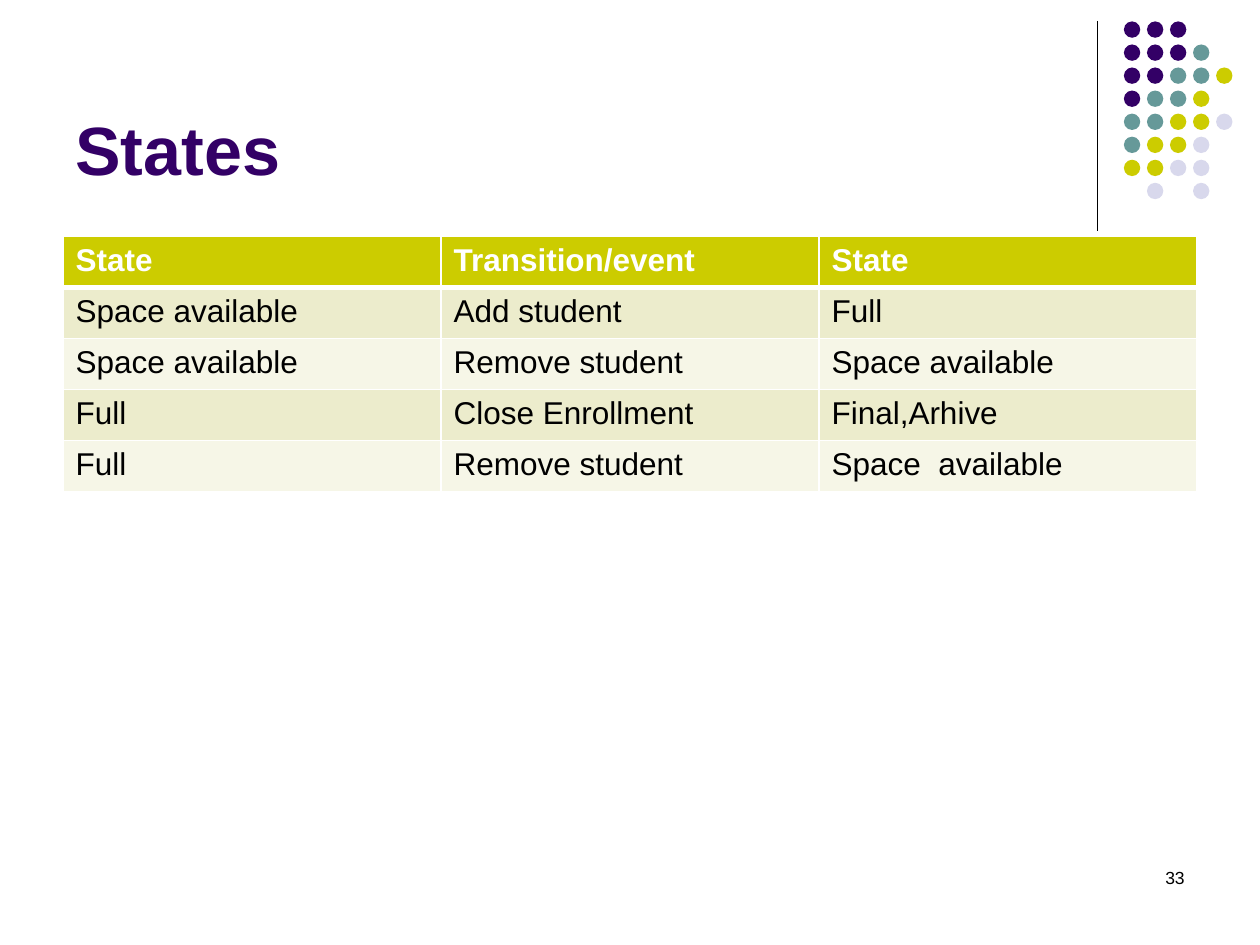
import lxml.etree
import pptx
import pptx.dml.color
import pptx.enum.shapes
import pptx.enum.text
import pptx.oxml.ns
import pptx.util

RGB = pptx.dml.color.RGBColor
PURPLE = RGB(0x33, 0x00, 0x66)
TEAL = RGB(0x66, 0x99, 0x99)
LIME = RGB(0xCC, 0xCC, 0x00)
LAVENDER = RGB(0xD8, 0xD8, 0xEC)
CREAM = RGB(0xEC, 0xEC, 0xCC)
IVORY = RGB(0xF6, 0xF6, 0xE7)
WHITE = RGB(0xFF, 0xFF, 0xFF)
BLACK = RGB(0x00, 0x00, 0x00)

SLIDE_WIDTH = pptx.util.Inches(10)
SLIDE_HEIGHT = pptx.util.Inches(7.5)
DOT_LEFT, DOT_TOP, DOT_PITCH, DOT_SIZE = 8.92, 0.17, 0.183, 0.13
DOT_ROWS = ["PPP", "PPPT", "PPTTL", "PTTL", "TTLLV", "TLLV", "LLVV", " V V"]
DOT_COLORS = {"P": PURPLE, "T": TEAL, "L": LIME, "V": LAVENDER}

TITLE_FORMAT = {"name": "Arial", "size": pptx.util.Pt(39), "bold": True, "color": PURPLE}
HEADER_FORMAT = {"name": "Arial", "size": pptx.util.Pt(18), "bold": True, "color": WHITE}
BODY_FORMAT = {"name": "Arial", "size": pptx.util.Pt(18), "bold": False, "color": BLACK}
NUMBER_FORMAT = {"name": "Arial", "size": pptx.util.Pt(10), "bold": False, "color": BLACK}

TRANSITIONS = [
    ("State", "Transition/event", "State"),
    ("Space available", "Add student", "Full"),
    ("Space available", "Remove student", "Space available"),
    ("Full", "Close Enrollment", "Final,Arhive"),
    ("Full", "Remove student", "Space  available"),
]


def share(x, y, width, height):
    """Turn shares of the slide's size into a box of whole lengths."""
    return (int(x * SLIDE_WIDTH), int(y * SLIDE_HEIGHT),
            int(width * SLIDE_WIDTH), int(height * SLIDE_HEIGHT))


def write(frame, wording, formats):
    """Put one formatted run of text into a text frame."""
    run = frame.paragraphs[0].add_run()
    run.text = wording
    for key, value in formats.items():
        if key == "color":
            run.font.color.rgb = value
        else:
            setattr(run.font, key, value)


def add_label(slide, box, wording, formats, anchor, alignment):
    """Add a wrapping text box."""
    frame = slide.shapes.add_textbox(*box).text_frame
    frame.word_wrap = True
    frame.vertical_anchor = anchor
    write(frame, wording, formats)
    frame.paragraphs[0].alignment = alignment


def add_rule(slide):
    """Add the thin upright line beside the dots."""
    x, top, _, height = share(0.871, 0.022, 0, 0.222)
    rule = slide.shapes.add_connector(
        pptx.enum.shapes.MSO_CONNECTOR.STRAIGHT, x, top, x, top + height)
    rule.line.color.rgb = BLACK
    rule.line.width = pptx.util.Pt(0.75)
    properties = rule._element.spPr
    lxml.etree.SubElement(properties, pptx.oxml.ns.qn("a:effectLst"))


def add_dots(slide):
    """Add the grouped grid of coloured dots."""
    dots = slide.shapes.add_group_shape().shapes
    size = pptx.util.Inches(DOT_SIZE)
    for row, codes in enumerate(DOT_ROWS):
        for column, code in enumerate(codes):
            if code not in DOT_COLORS:
                continue
            dot = dots.add_shape(
                pptx.enum.shapes.MSO_SHAPE.OVAL,
                pptx.util.Inches(DOT_LEFT + column * DOT_PITCH),
                pptx.util.Inches(DOT_TOP + row * DOT_PITCH), size, size)
            dot.shadow.inherit = False
            dot.fill.solid()
            dot.fill.fore_color.rgb = DOT_COLORS[code]
            dot.line.fill.background()


def add_borders(cell, bottom_width):
    """Draw white borders around a table cell."""
    properties = cell._tc.get_or_add_tcPr()
    widths = {"a:lnL": 1, "a:lnR": 1, "a:lnT": 1, "a:lnB": bottom_width}
    for tag, width in widths.items():
        border = lxml.etree.SubElement(
            properties, pptx.oxml.ns.qn(tag), w=str(pptx.util.Pt(width)))
        fill = lxml.etree.SubElement(border, pptx.oxml.ns.qn("a:solidFill"))
        lxml.etree.SubElement(fill, pptx.oxml.ns.qn("a:srgbClr"), val=str(WHITE))


def add_transition_table(slide):
    """Add the table of states and the events between them."""
    box = share(0.05, 0.25, 0.9, 0.27)
    table = slide.shapes.add_table(len(TRANSITIONS), len(TRANSITIONS[0]), *box).table
    for row, wordings in enumerate(TRANSITIONS):
        is_header = row == 0
        band = LIME if is_header else (IVORY, CREAM)[row % 2]
        for column, wording in enumerate(wordings):
            cell = table.cell(row, column)
            add_borders(cell, 3 if is_header else 1)
            cell.fill.solid()
            cell.fill.fore_color.rgb = band
            write(cell.text_frame, wording, HEADER_FORMAT if is_header else BODY_FORMAT)


def main():
    """Build the slide and save it."""
    deck = pptx.Presentation()
    deck.slide_width, deck.slide_height = SLIDE_WIDTH, SLIDE_HEIGHT
    slide = deck.slides.add_slide(deck.slide_layouts[6])
    anchors, alignments = pptx.enum.text.MSO_ANCHOR, pptx.enum.text.PP_ALIGN
    add_rule(slide)
    add_dots(slide)
    add_label(slide, share(0.05, 0.017, 0.825, 0.19), "States", TITLE_FORMAT,
              anchors.BOTTOM, alignments.LEFT)
    add_transition_table(slide)
    add_label(slide, share(0.825, 0.911, 0.125, 0.067), "33", NUMBER_FORMAT,
              anchors.TOP, alignments.RIGHT)
    deck.save("out.pptx")


if __name__ == "__main__":
    main()
